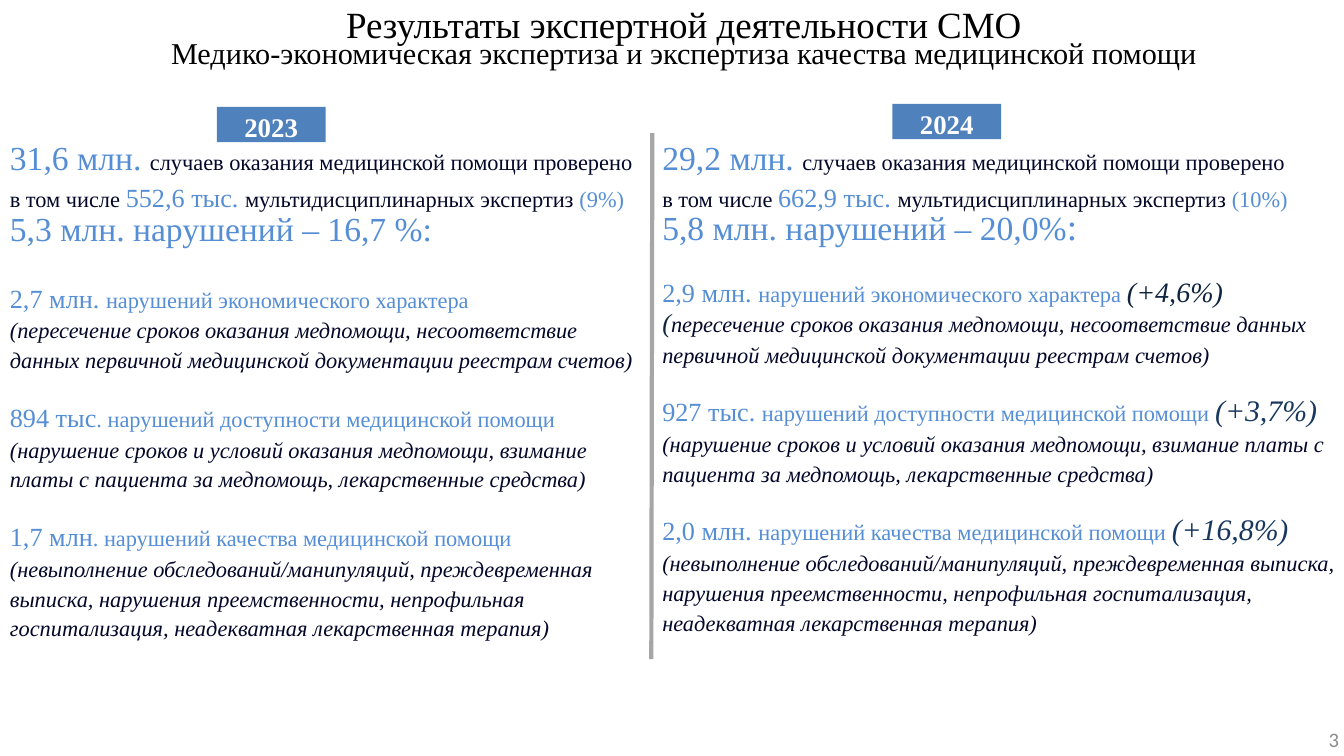
from dataclasses import dataclass
from typing import Optional

from lxml.etree import SubElement
from pptx import Presentation
from pptx.dml.color import RGBColor
from pptx.enum.shapes import MSO_CONNECTOR, MSO_SHAPE
from pptx.enum.text import MSO_ANCHOR, MSO_AUTO_SIZE, PP_ALIGN
from pptx.oxml.ns import qn
from pptx.util import Inches, Pt


@dataclass(frozen=True)
class Theme:
    font: str = "Times New Roman"
    plain: str = "Calibri"
    black: str = "000000"
    white: str = "FFFFFF"
    ink: str = "030829"
    blue: str = "558ED5"
    navy: str = "17375E"
    dark: str = "0F243E"
    badge: str = "4F81BD"
    rule: str = "A6A6A6"
    gray: str = "8C8C8C"
    title: float = 26.4
    sub: float = 21.6
    big: float = 24
    colon: float = 26.7
    rise: float = 21.3
    first: float = 20
    sum: float = 18.7
    body: float = 16
    page: float = 14.7
    wide: float = 25.3
    tight: float = 21.3


T = Theme()


@dataclass(frozen=True)
class Span:
    text: str
    size: float
    color: str
    italic: bool = False
    bold: bool = False
    font: str = T.font
    wrap: bool = False


@dataclass(frozen=True)
class Topic:
    head: tuple[Span, ...]
    note: tuple[Span, ...]
    gap: float = T.tight


@dataclass(frozen=True)
class Year:
    name: str
    left: float
    width: float
    height: float
    tag: tuple[float, float]
    cases: str
    multi: str
    share: str
    faults: tuple[Span, ...]
    topics: tuple[Topic, ...]


def blue(text: str, size: float = T.body, wrap: bool = False) -> Span:
    return Span(text, size, T.blue, wrap=wrap)


def ink(text: str) -> Span:
    return Span(text, T.body, T.ink)


def note(text: str) -> Span:
    return Span(text, T.body, T.ink, italic=True)


def rise(text: str, size: float = T.rise, color: str = T.navy) -> Span:
    return Span(text, size, color, italic=True, wrap=True)


MONEY = "нарушений экономического характера"
ACCESS = "нарушений доступности медицинской помощи"
CARE = "нарушений качества медицинской помощи"
TERMS = "пересечение сроков оказания медпомощи, несоответствие данных первичной медицинской документации реестрам счетов)"
LIMITS = note("(нарушение сроков и условий оказания медпомощи, взимание платы с пациента за медпомощь, лекарственные средства)")
LAPSES = note("(невыполнение обследований/манипуляций, преждевременная выписка, нарушения преемственности, непрофильная госпитализация, неадекватная лекарственная терапия)")

YEARS = (
    Year("2023", 0, 6.54, 5.29, (2.15, 1.06), "31,6 млн. ", "552,6 тыс. ", "(9%)",
         (blue("5,3 млн. нарушений – 16,7 %:", T.big),),
         (Topic((blue("2,7 млн. ", T.sum), blue(MONEY, wrap=True)),
                (note("(" + TERMS),), T.wide),
          Topic((blue("894 тыс", T.sum), blue(". " + ACCESS, wrap=True)), (LIMITS,)),
          Topic((blue("1,7 млн", T.sum), blue(". " + CARE, wrap=True)), (LAPSES,)))),
    Year("2024", 6.47, 6.88, 5.23, (8.85, 1.03), "29,2 млн. ", "662,9 тыс. ", "(10%)",
         (blue("5,8 млн. нарушений – 20,0%", T.big), blue(":", T.colon)),
         (Topic((blue("2,9 млн. ", T.sum), blue(MONEY + " "), rise("(+4,6%)", T.first, T.dark)),
                (Span("(", T.sum, T.dark, italic=True), note(TERMS))),
          Topic((blue("927 тыс. ", T.sum), blue(ACCESS + " "), rise("(+3,7%)")), (LIMITS,)),
          Topic((blue("2,0 млн. ", T.sum), blue(CARE + " "), rise("(+16,8%)")), (LAPSES,)))),
)


def write(para, spans: tuple[Span, ...]) -> None:
    for span in spans:
        run = para.add_run()
        run.text = span.text
        font = run.font
        font.name = span.font
        font.size = Pt(span.size)
        font.bold = span.bold
        font.italic = span.italic
        font.color.rgb = RGBColor.from_string(span.color)
        if span.wrap:
            para.add_line_break()


def place(shape, left: float, top: float, width: float, height: float) -> None:
    shape.left, shape.top = Inches(left), Inches(top)
    shape.width, shape.height = Inches(width), Inches(height)


def draw_title(slide) -> None:
    title = slide.shapes.title
    place(title, 0.85, 0.06, 11.87, 0.71)
    frame = title.text_frame
    frame.auto_size = MSO_AUTO_SIZE.NONE
    frame.vertical_anchor = MSO_ANCHOR.MIDDLE
    para = frame.paragraphs[0]
    para.alignment = PP_ALIGN.CENTER
    para.line_spacing = 0.7
    write(para, (
        Span("Результаты экспертной деятельности СМО", T.title, T.black, wrap=True),
        Span("Медико-экономическая экспертиза и экспертиза качества медицинской помощи", T.sub, T.black)))


def draw_text(slide, year: Year) -> None:
    box = slide.shapes.add_textbox(
        Inches(year.left), Inches(1.36), Inches(year.width), Inches(year.height))
    frame = box.text_frame
    frame.word_wrap = True
    frame.auto_size = MSO_AUTO_SIZE.SHAPE_TO_FIT_TEXT
    intro = (
        (blue(year.cases, T.big), ink("случаев оказания медицинской помощи проверено")),
        (ink("в том числе "), blue(year.multi, T.sum),
         ink("мультидисциплинарных экспертиз "), blue(year.share)),
        year.faults)
    rows = [(spans, T.wide, 0) for spans in intro]
    rows += [(topic.head + topic.note, T.tight, topic.gap) for topic in year.topics]
    for at, (spans, pitch, gap) in enumerate(rows):
        para = frame.add_paragraph() if at else frame.paragraphs[0]
        para.line_spacing = Pt(pitch)
        para.space_before = Pt(gap)
        write(para, spans)


def draw_badge(slide, year: Year) -> None:
    left, top = year.tag
    badge = slide.shapes.add_shape(
        MSO_SHAPE.RECTANGLE, Inches(left), Inches(top), Inches(1.08), Inches(0.35))
    badge.shadow.inherit = False
    badge.fill.solid()
    badge.fill.fore_color.rgb = RGBColor.from_string(T.badge)
    badge.line.fill.background()
    badge.text_frame.vertical_anchor = MSO_ANCHOR.MIDDLE
    para = badge.text_frame.paragraphs[0]
    para.alignment = PP_ALIGN.CENTER
    write(para, (Span(year.name, T.big, T.white, bold=True),))
    para.runs[0].font._element.set("cap", "small")


def draw_rule(slide) -> None:
    rule = slide.shapes.add_connector(
        MSO_CONNECTOR.STRAIGHT, Inches(6.47), Inches(1.32), Inches(6.46), Inches(6.54))
    rule.line.color.rgb = RGBColor.from_string(T.rule)
    rule.line.width = Pt(3)
    SubElement(rule._element.spPr, qn("a:effectLst"))


def draw_page(slide) -> None:
    box = slide.shapes.add_textbox(Inches(10.27), Inches(7.13), Inches(3.11), Inches(0.4))
    frame = box.text_frame
    frame.word_wrap = True
    frame.vertical_anchor = MSO_ANCHOR.MIDDLE
    para = frame.paragraphs[0]
    para.alignment = PP_ALIGN.RIGHT
    write(para, (Span("3", T.page, T.gray, font=T.plain),))


def main() -> None:
    deck = Presentation()
    deck.slide_width, deck.slide_height = Inches(13.33), Inches(7.5)
    slide = deck.slides.add_slide(deck.slide_layouts[5])
    draw_title(slide)
    for year in YEARS:
        draw_text(slide, year)
    draw_rule(slide)
    for year in YEARS:
        draw_badge(slide, year)
    draw_page(slide)
    deck.save("out.pptx")


if __name__ == "__main__":
    main()
